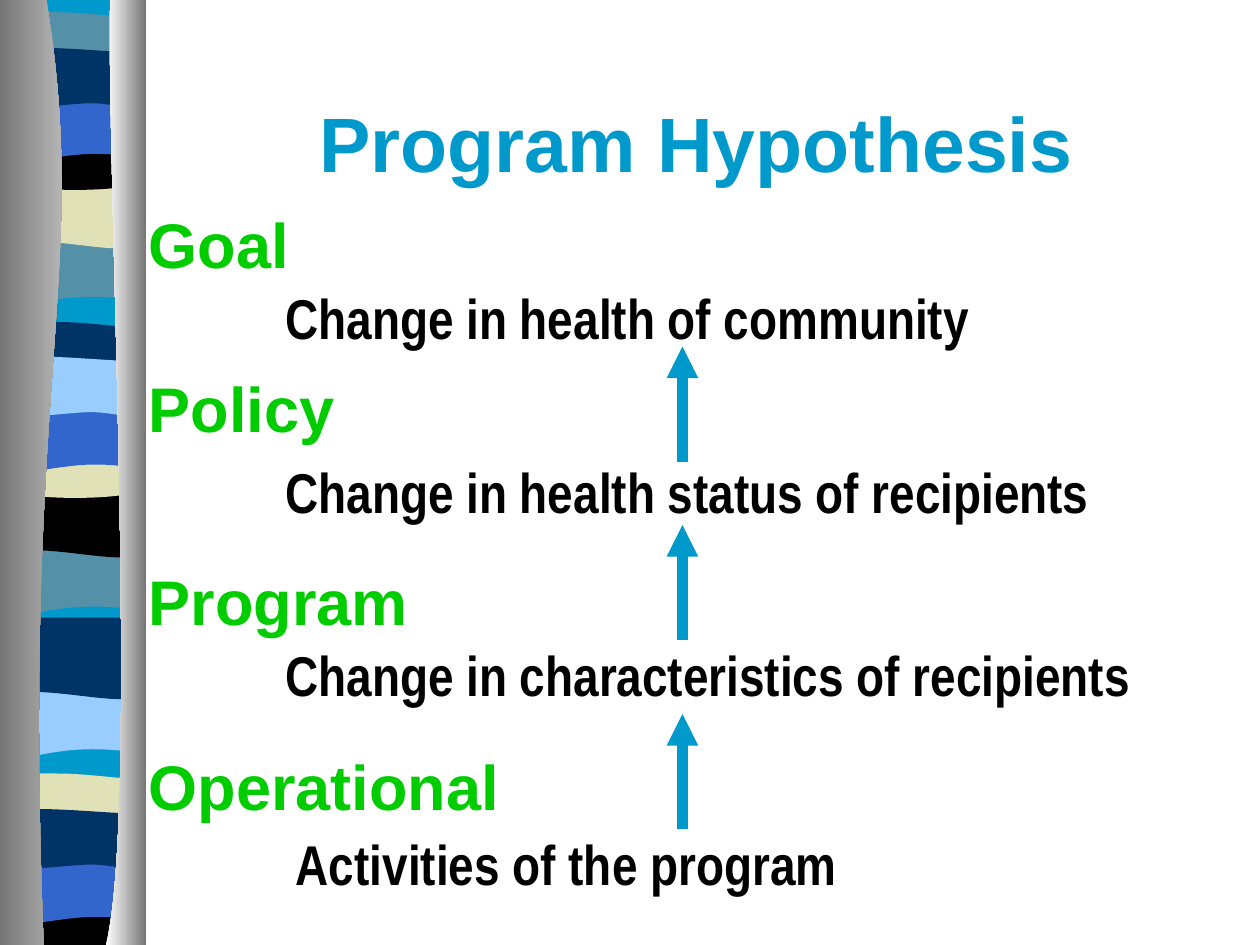
"""Build the Program Hypothesis slide with its striped side ornament."""
from lxml.etree import SubElement
from pptx import Presentation
from pptx.dml.color import RGBColor
from pptx.enum.shapes import MSO_CONNECTOR
from pptx.enum.text import MSO_ANCHOR, MSO_AUTO_SIZE, PP_ALIGN
from pptx.oxml.ns import qn
from pptx.util import Pt

CYAN = RGBColor(0x00, 0x99, 0xCC)
TEAL = RGBColor(0x54, 0x90, 0xA8)
SAND = RGBColor(0xE1, 0xE1, 0xB7)
NAVY = RGBColor(0x00, 0x33, 0x66)
BLUE = RGBColor(0x33, 0x66, 0xCC)
SKY = RGBColor(0x99, 0xCC, 0xFF)
GREEN = RGBColor(0x00, 0xCC, 0x00)
BLACK = RGBColor(0x00, 0x00, 0x00)
WHITE = RGBColor(0xFF, 0xFF, 0xFF)
GREY = RGBColor(0x76, 0x76, 0x76)
SILVER = RGBColor(0xD3, 0xD3, 0xD3)

PAGE_WIDTH, PAGE_HEIGHT = 720, 540
LEFT, RIGHT = 4, 82

BAND_EDGES = {
    "drape": ([(LEFT, 0), (RIGHT, 0)],
              [(RIGHT, 39), (28, 31), (17, 47), (LEFT, 39)]),
    "ripple": ([(LEFT, -6), (RIGHT, -6)],
               [(RIGHT, 38), (69, 46), (28, 32), (LEFT, 38)]),
    "ribbon": ([(LEFT, -4), (9, -9), (21, -8), (34, -8),
                (47, -8), (72, -5), (RIGHT, -4)],
               [(RIGHT, 21), (69, 26), (17, 26), (LEFT, 21)]),
    "swell": ([(LEFT, 0), (52, 4), (66, 0), (RIGHT, 0)],
              [(RIGHT, 26), (69, 32), (17, 32), (LEFT, 26)]),
    "arch": ([(LEFT, 0), (RIGHT, 0)],
             [(RIGHT, 40), (70, 35), (65, 35), (52, 35),
              (39, 35), (16, 40), (LEFT, 40)]),
    "wave": ([(LEFT, -3), (15, -9), (57, -3), (RIGHT, -3)],
             [(RIGHT, 26), (77, 31), (65, 26), (52, 26),
              (39, 26), (12, 31), (LEFT, 26)]),
}

BANDS = [
    ("drape", 133, TEAL), ("ripple", 101.5, SAND), ("ribbon", 15, TEAL),
    ("swell", 78, BLACK), ("arch", 53, BLUE), ("wave", 33, NAVY),
    ("drape", 310, TEAL), ("ripple", 278, BLACK), ("ribbon", 192, NAVY),
    ("swell", 254, SAND), ("arch", 230.5, BLUE), ("wave", 209.5, SKY),
    ("drape", 391.5, SKY), ("ripple", 359, NAVY), ("ribbon", 450, SAND),
    ("swell", 512.5, BLACK), ("arch", 489, BLUE), ("wave", 468, NAVY),
]

LEVELS = [("Goal", 114, 114), ("Policy", 207.5, 126),
          ("Program", 318, 174), ("Operational", 423.5, 222)]
CHANGES = [("Change in health of community", 156, 158.5),
           ("Change in health status of recipients", 156, 258),
           ("Change in characteristics of recipients", 156, 362.5),
           ("Activities of the program", 162, 470.5)]
ARROW_X, ARROW_LENGTH = 390, 66
ARROW_TOPS = [198, 300, 408]


def add_outline(page, *edges):
    """Add a closed freeform; edges of four or more points are chained curves."""
    corners = [(Pt(x), Pt(y)) for edge in edges for x, y in edge]
    builder = page.shapes.build_freeform(*corners[0], scale=1.0)
    builder.add_line_segments(corners[1:], close=True)
    shape = builder.convert_to_shape()
    shape.shadow.inherit = False
    shape.line.fill.background()
    nodes = list(next(shape._element.iter(qn("a:path"))))
    for edge in edges:
        if len(edge) > 3:
            bend_segments(nodes[1:len(edge)])
        nodes = nodes[len(edge):]
    return shape


def bend_segments(segments):
    """Turn each three line segments into one cubic curve."""
    for first in range(0, len(segments), 3):
        curve, *others = segments[first:first + 3]
        bend = SubElement(curve.getparent(), qn("a:cubicBezTo"))
        curve.addprevious(bend)
        for segment in (curve, *others):
            bend.append(segment[0])
            segment.getparent().remove(segment)


def add_band(page, kind, top, color):
    """Add one wavy band of the ornament."""
    edges = [[(x, top + y) for x, y in edge] for edge in BAND_EDGES[kind]]
    band = add_outline(page, *edges)
    band.fill.solid()
    band.fill.fore_color.rgb = color


def add_column(page, edge, outer_x, colors):
    """Add a shaded column between a curved edge and a straight side."""
    column = add_outline(page, edge, [(outer_x, PAGE_HEIGHT), (outer_x, 0)])
    column.fill.gradient()
    column.fill.gradient_angle = 0
    for stop, color in zip(column.fill.gradient_stops, colors):
        stop.color.rgb = color


def add_ornament(page):
    """Add the striped ribbon and the columns on both sides of it."""
    base = add_outline(page, [(LEFT, 0), (RIGHT, 0)], [(RIGHT, 538.5), (LEFT, 538.5)])
    base.fill.solid()
    base.fill.fore_color.rgb = CYAN
    for band in BANDS:
        add_band(page, *band)
    add_column(page, [(26.5, 0), (52, 156), (12, 213), (25, PAGE_HEIGHT)],
               0, (GREY, SILVER))
    add_column(page, [(63, 0), (60.5, 90), (80, 465), (60.5, PAGE_HEIGHT)],
               83.5, (WHITE, GREY))


def add_text(page, text, left, top, width, height, size, color, font="Arial"):
    """Add a one-paragraph bold text box."""
    box = page.shapes.add_textbox(Pt(left), Pt(top), Pt(width), Pt(height))
    frame = box.text_frame
    frame.word_wrap = True
    paragraph = frame.paragraphs[0]
    paragraph.text = text
    paragraph.font.name = font
    paragraph.font.size = Pt(size)
    paragraph.font.bold = True
    paragraph.font.color.rgb = color
    return frame


def add_title(page, text):
    """Add the centred title."""
    frame = add_text(page, text, 92, 36, 612, 90, 44, CYAN)
    frame.vertical_anchor = MSO_ANCHOR.MIDDLE
    frame.paragraphs[0].alignment = PP_ALIGN.CENTER


def add_label(page, *details):
    """Add a text box that grows with its text."""
    frame = add_text(page, *details)
    frame.auto_size = MSO_AUTO_SIZE.SHAPE_TO_FIT_TEXT
    frame.paragraphs[0].space_before = Pt(4)


def add_up_arrow(page, top):
    """Add a thick arrow that points upwards."""
    arrow = page.shapes.add_connector(
        MSO_CONNECTOR.STRAIGHT, Pt(ARROW_X), Pt(top + ARROW_LENGTH), Pt(ARROW_X), Pt(top))
    arrow.line.color.rgb = CYAN
    arrow.line.width = Pt(6)
    SubElement(arrow.line._get_or_add_ln(), qn("a:tailEnd"), type="triangle")
    SubElement(arrow._element.spPr, qn("a:effectLst"))


def main():
    """Build and save the deck."""
    deck = Presentation()
    deck.slide_width, deck.slide_height = Pt(PAGE_WIDTH), Pt(PAGE_HEIGHT)
    page = deck.slides.add_slide(deck.slide_layouts[6])
    add_ornament(page)
    add_title(page, "Program Hypothesis")
    for text, top, width in LEVELS:
        add_label(page, text, 78, top, width, 50.5, 36, GREEN)
    for text, left, top in CHANGES:
        add_label(page, text, left, top, 546, 45.5, 32, BLACK, "Arial Narrow")
    for top in ARROW_TOPS:
        add_up_arrow(page, top)
    deck.save("out.pptx")


if __name__ == "__main__":
    main()
